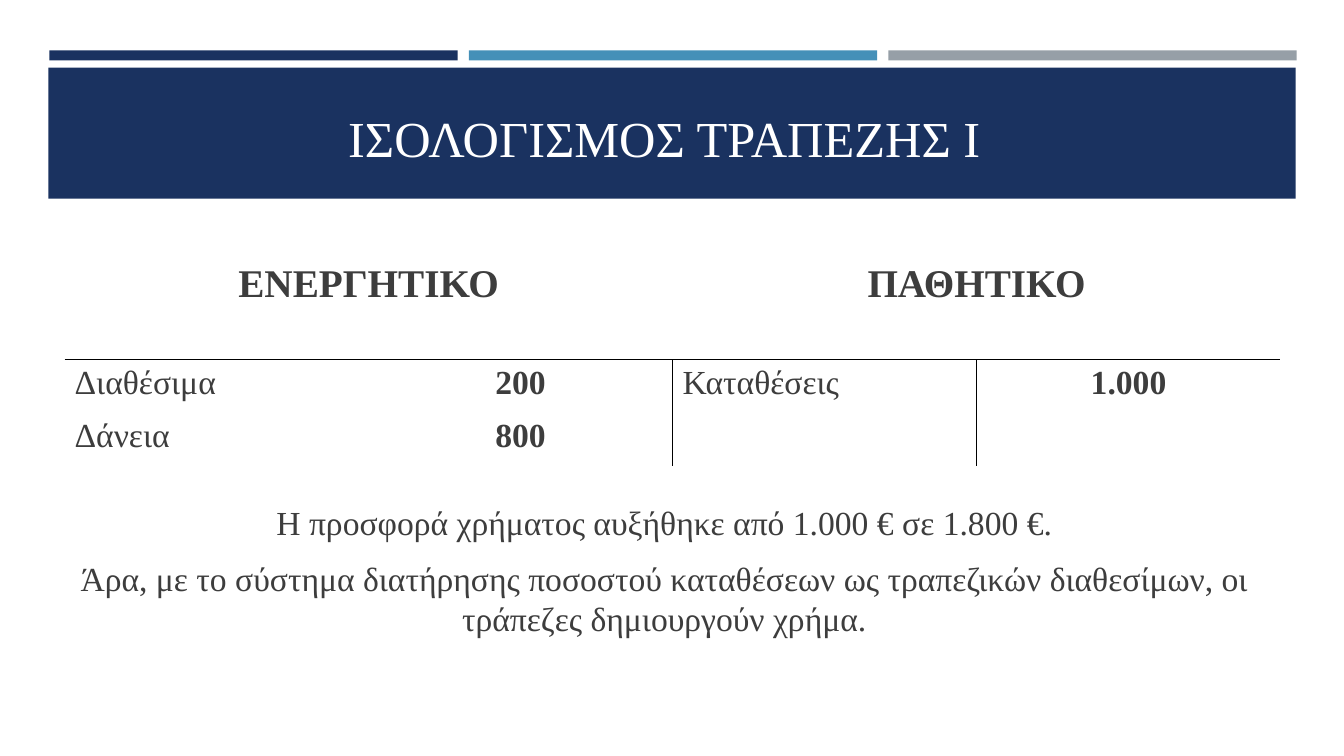
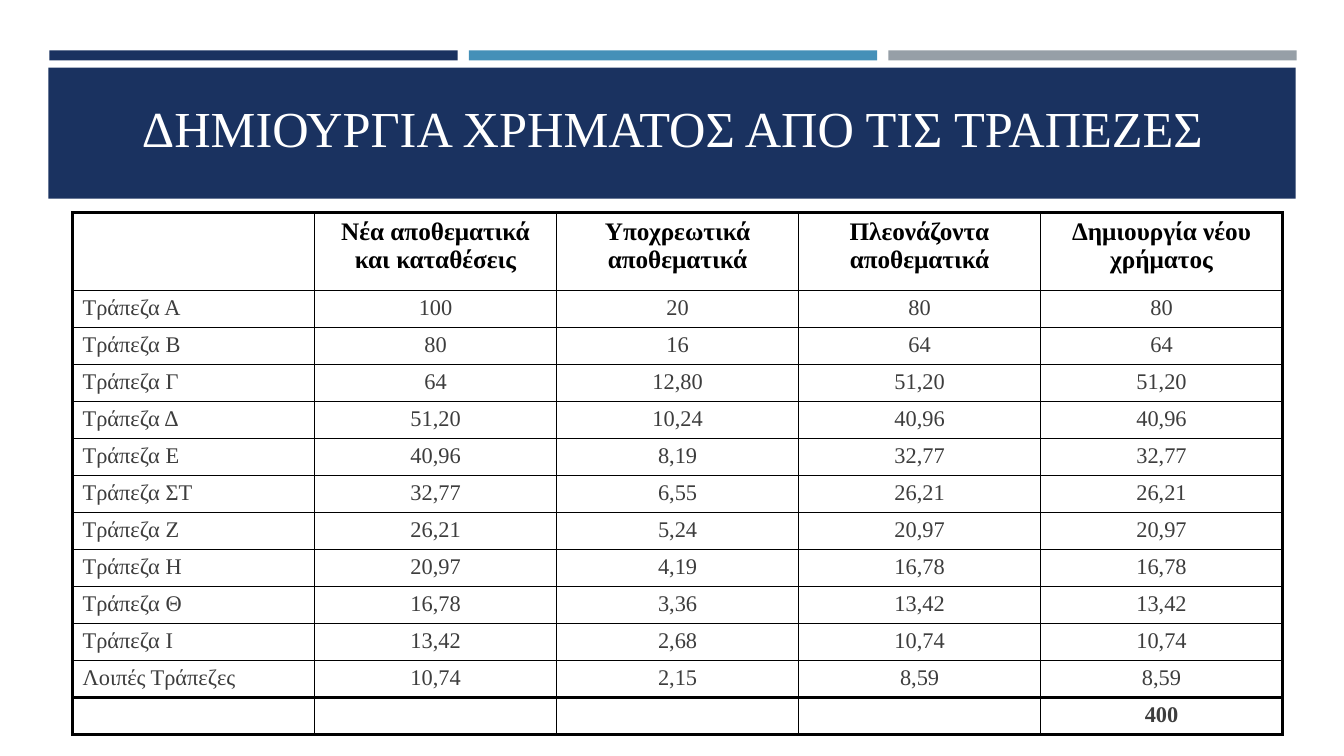
"""Two slides on bank balance sheets and money creation by banks."""
from lxml import etree
from pptx import Presentation
from pptx.dml.color import RGBColor
from pptx.enum.shapes import MSO_SHAPE
from pptx.enum.text import MSO_ANCHOR, PP_ALIGN
from pptx.oxml.ns import qn
from pptx.util import Inches, Pt

RECTANGLE = MSO_SHAPE.RECTANGLE
LEFT, CENTER = PP_ALIGN.LEFT, PP_ALIGN.CENTER
MIDDLE, BOTTOM = MSO_ANCHOR.MIDDLE, MSO_ANCHOR.BOTTOM

NAVY = RGBColor(0x1A, 0x32, 0x60)
BLUE = RGBColor(0x45, 0x90, 0xB8)
GRAY = RGBColor(0x96, 0x9F, 0xA7)
INK = RGBColor(0x3D, 0x3D, 0x3D)
BLACK = RGBColor(0, 0, 0)
WHITE = RGBColor(0xFF, 0xFF, 0xFF)

FONT = "Times New Roman"
PLAIN_TABLE_STYLE = "{2D5ABB26-0587-4C30-8999-92F81FD0307C}"
THIN, THICK = 1, 2.25

STRIPES = [NAVY, BLUE, GRAY]
STRIPE_LEFT, STRIPE_STEP, STRIPE_WIDTH = 0.49, 4.16, 4.05

SHEET_TITLE = "ΙΣΟΛΟΓΙΣΜΟΣ ΤΡΑΠΕΖΗΣ Ι"
SHEET_SIDES = ["ΕΝΕΡΓΗΤΙΚΟ", "ΠΑΘΗΤΙΚΟ"]
SHEET_ENTRIES = ["Διαθέσιμα\nΔάνεια", "200\n800", "Καταθέσεις", "1.000"]
SHEET_NOTE = (
    "Η προσφορά χρήματος αυξήθηκε από 1.000 € σε 1.800 €.\n"
    "Άρα, με το σύστημα διατήρησης ποσοστού καταθέσεων ως τραπεζικών "
    "διαθεσίμων, οι τράπεζες δημιουργούν χρήμα."
)

MONEY_TITLE = "ΔΗΜΙΟΥΡΓΙΑ ΧΡΗΜΑΤΟΣ ΑΠΟ ΤΙΣ ΤΡΑΠΕΖΕΣ"
MONEY_ROWS = [
    ("", "Νέα αποθεματικά\nκαι καταθέσεις", "Υποχρεωτικά αποθεματικά",
     "Πλεονάζοντα\nαποθεματικά", "Δημιουργία νέου χρήματος"),
    ("Τράπεζα Α", "100", "20", "80", "80"),
    ("Τράπεζα Β", "80", "16", "64", "64"),
    ("Τράπεζα Γ", "64", "12,80", "51,20", "51,20"),
    ("Τράπεζα Δ", "51,20", "10,24", "40,96", "40,96"),
    ("Τράπεζα Ε", "40,96", "8,19", "32,77", "32,77"),
    ("Τράπεζα ΣΤ", "32,77", "6,55", "26,21", "26,21"),
    ("Τράπεζα Ζ", "26,21", "5,24", "20,97", "20,97"),
    ("Τράπεζα Η", "20,97", "4,19", "16,78", "16,78"),
    ("Τράπεζα Θ", "16,78", "3,36", "13,42", "13,42"),
    ("Τράπεζα Ι", "13,42", "2,68", "10,74", "10,74"),
    ("Λοιπές Τράπεζες", "10,74", "2,15", "8,59", "8,59"),
    ("", "", "", "", "400"),
]
MONEY_HEIGHTS = [0.77] + [0.34] * 8 + [0.37] + [0.34] * 3


def write(frame, text, size, color, bold=False, align=CENTER, spaced=False):
    """Write each line of the text as one paragraph."""
    for index, line in enumerate(text.split("\n")):
        para = frame.paragraphs[0] if index == 0 else frame.add_paragraph()
        para.alignment = align
        para.font.name, para.font.size = FONT, Pt(size)
        para.font.bold, para.font.color.rgb = bold, color
        if spaced:
            para.space_before, para.space_after = Pt(size * 0.2), Pt(6)
        if line:
            para.add_run().text = line
        else:
            end = etree.SubElement(para._p, qn("a:endParaRPr"))
            end.set("sz", str(size * 100))


def add_text(page, place, text, size, color, anchor, spaced=False):
    """Add a wrapping text box."""
    box = page.shapes.add_textbox(*map(Inches, place))
    box.text_frame.word_wrap = True
    box.text_frame.vertical_anchor = anchor
    write(box.text_frame, text, size, color, spaced=spaced)


def add_band(page, place, color):
    """Add a filled rectangle without outline."""
    band = page.shapes.add_shape(RECTANGLE, *map(Inches, place))
    band.shadow.inherit = False
    band.fill.solid()
    band.fill.fore_color.rgb = color
    band.line.fill.background()


def add_page(deck, title, title_place):
    """Add a blank page with the stripes and the title band."""
    page = deck.slides.add_slide(deck.slide_layouts[6])
    for index, color in enumerate(STRIPES):
        left = STRIPE_LEFT + index * STRIPE_STEP
        add_band(page, (left, 0.5, STRIPE_WIDTH, 0.1), color)
    add_band(page, (0.48, 0.67, 12.37, 1.3), NAVY)
    add_text(page, title_place, title, 36, WHITE, BOTTOM)
    return page


def add_grid(page, left, top, column_width, columns, heights):
    """Add an unstyled table with equal columns."""
    table = page.shapes.add_table(
        len(heights), columns, Inches(left), Inches(top),
        Inches(column_width * columns), Inches(sum(heights))).table
    table.first_row = table.horz_banding = False
    table._tbl.tblPr.find(qn("a:tableStyleId")).text = PLAIN_TABLE_STYLE
    for column in table.columns:
        column.width = Inches(column_width)
    for row, height in zip(table.rows, heights):
        row.height = Inches(height)
    return table


def finish_cell(cell, **edges):
    """Draw the given edges (L, R, T, B) and leave the cell unfilled."""
    properties = cell._tc.get_or_add_tcPr()
    for side in "LRTB":
        if side in edges:
            line = etree.SubElement(properties, qn("a:ln" + side))
            line.set("w", str(Pt(edges[side])))
            fill = etree.SubElement(line, qn("a:solidFill"))
            etree.SubElement(fill, qn("a:srgbClr")).set("val", str(BLACK))
    cell.fill.background()


def add_balance_sheet(deck):
    """Build the balance sheet page."""
    page = add_page(deck, SHEET_TITLE, (0.56, 0.74, 12.06, 0.97))
    table = add_grid(page, 0.64, 2.55, 3.015, 4, [1.02, 0.96])
    for index, side in enumerate(SHEET_SIDES):
        first = table.cell(0, 2 * index)
        first.merge(table.cell(0, 2 * index + 1))
        write(first.text_frame, side, 28, INK, bold=True)
    for column, entry in enumerate(SHEET_ENTRIES):
        amount = column % 2 == 1
        cell = table.cell(1, column)
        write(cell.text_frame, entry, 24, INK, amount,
              CENTER if amount else LEFT, spaced=True)
        divider = {1: {"R": THIN}, 2: {"L": THIN}}.get(column, {})
        finish_cell(table.cell(0, column), B=THIN)
        finish_cell(cell, T=THIN, **divider)
    add_text(page, (0.56, 4.96, 12.06, 1.39), SHEET_NOTE, 24, INK, MIDDLE,
             spaced=True)


def add_money_creation(deck):
    """Build the money creation page."""
    page = add_page(deck, MONEY_TITLE, (0.64, 0.77, 12.06, 0.84))
    columns, last = len(MONEY_ROWS[0]), len(MONEY_ROWS) - 1
    table = add_grid(page, 0.72, 2.11, 2.4, columns, MONEY_HEIGHTS)
    for row, values in enumerate(MONEY_ROWS):
        for column, value in enumerate(values):
            cell = table.cell(row, column)
            header = row == 0
            write(cell.text_frame, value, 18 if header else 16,
                  BLACK if header else INK, row in (0, last),
                  CENTER if header or column else LEFT)
            finish_cell(
                cell,
                L=THICK if column == 0 else THIN,
                R=THICK if column == columns - 1 else THIN,
                T=THICK if row in (0, last) else THIN,
                B=THICK if row >= last - 1 else THIN)


def main():
    """Build and save the deck."""
    deck = Presentation()
    deck.slide_width, deck.slide_height = Inches(13.33), Inches(7.5)
    add_balance_sheet(deck)
    add_money_creation(deck)
    deck.save("out.pptx")


if __name__ == "__main__":
    main()
